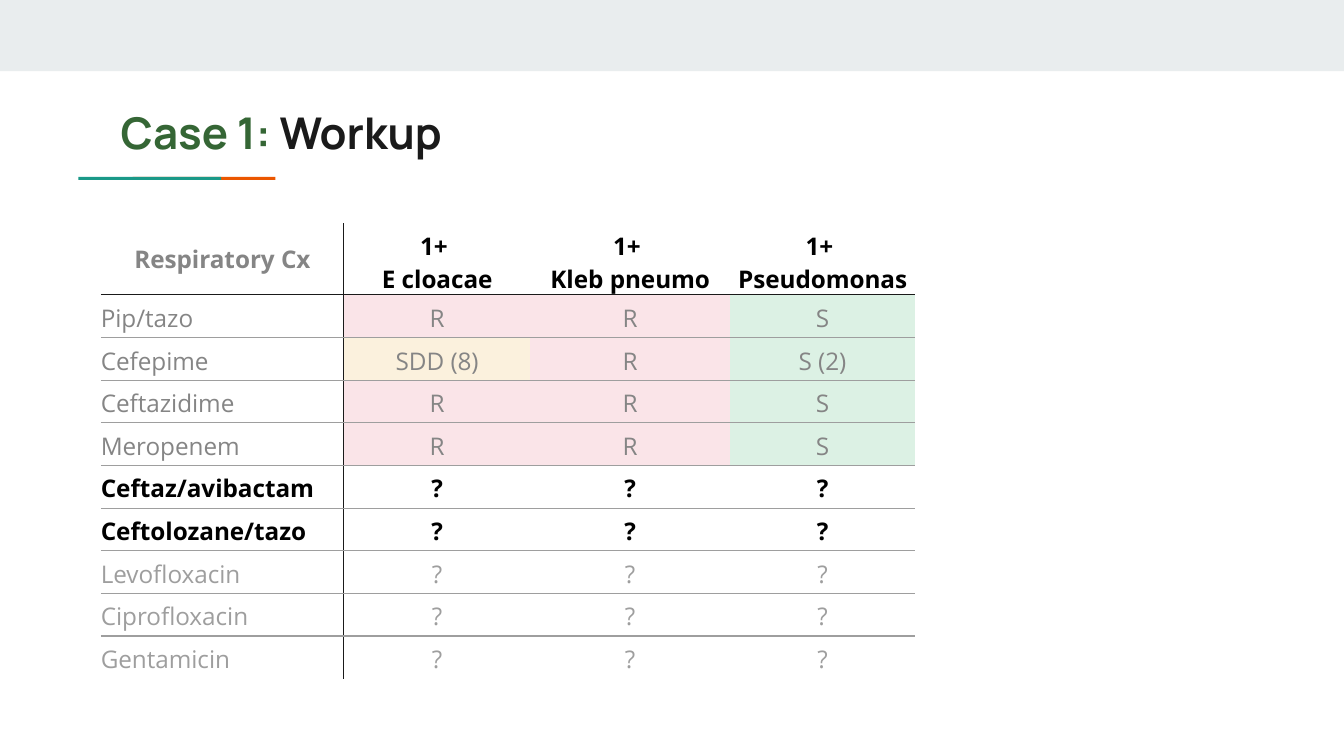
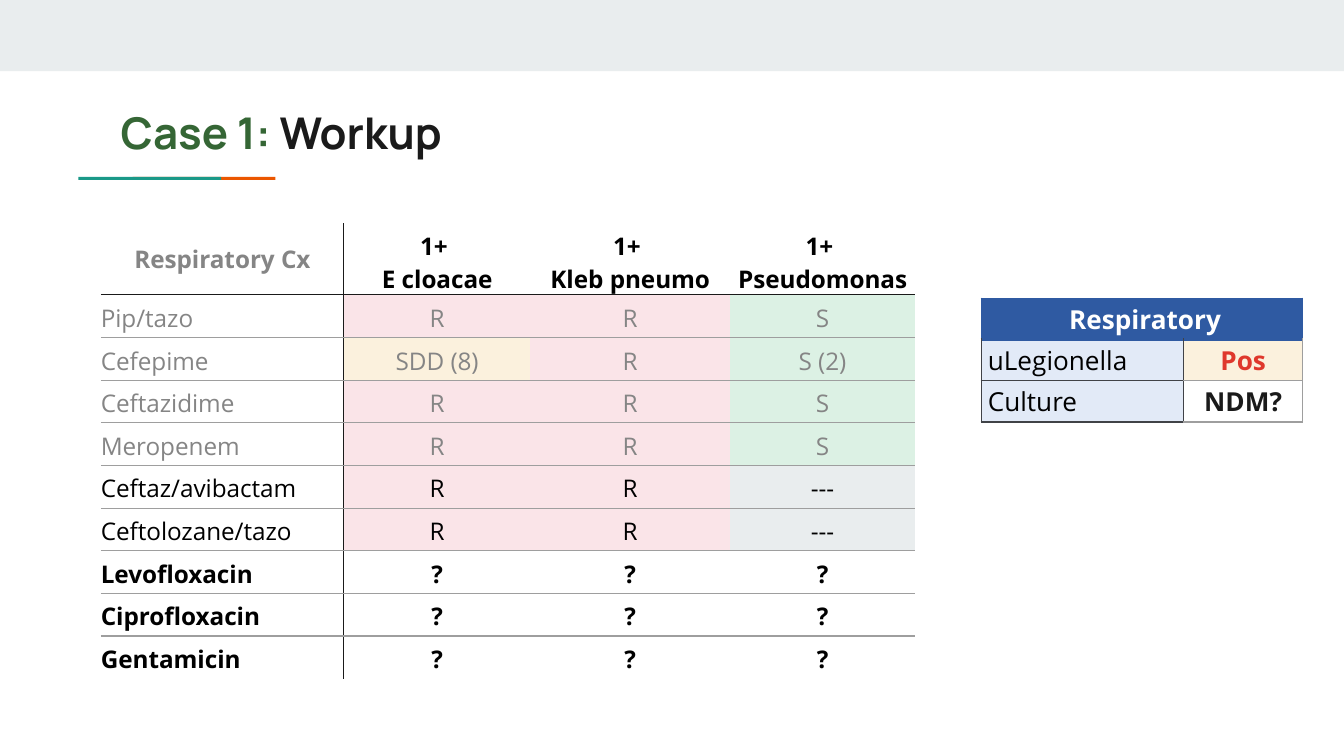
from dataclasses import dataclass
from typing import NamedTuple, Optional

from lxml.etree import SubElement
from pptx import Presentation
from pptx.dml.color import RGBColor
from pptx.enum.shapes import MSO_SHAPE
from pptx.enum.text import MSO_ANCHOR, PP_ALIGN
from pptx.oxml.ns import qn
from pptx.slide import Slide
from pptx.table import Table, _Cell
from pptx.util import Pt


@dataclass(frozen=True)
class Theme:
    heading_font: str = "Manrope"
    body_font: str = "Open Sans"
    title_size: float = 23.4
    culture_size: float = 13
    summary_size: float = 14
    band: str = "E9EDEE"
    teal: str = "1A9988"
    orange: str = "EB5600"
    case_green: str = "356635"
    ink: str = "1A1A1A"
    black: str = "000000"
    white: str = "FFFFFF"
    muted: str = "858585"
    grid: str = "9E9E9E"
    resistant: str = "FAE4E8"
    susceptible: str = "DCF1E4"
    caution: str = "FBF1DD"
    summary_blue: str = "2F5AA2"
    summary_label: str = "E2EAF7"
    summary_line: str = "404247"
    alert: str = "DF382C"


THEME = Theme()


class Bar(NamedTuple):
    left: float
    top: float
    width: float
    height: float
    color: str


class Line(NamedTuple):
    color: str
    width: float = 0.75


class Borders(NamedTuple):
    left: Optional[Line] = None
    right: Optional[Line] = None
    top: Optional[Line] = None
    bottom: Optional[Line] = None


class Insets(NamedTuple):
    left: float = 0
    top: float = 0
    right: float = 0
    bottom: float = 0


@dataclass(frozen=True)
class CellLook:
    size: float
    color: str
    bold: bool = False
    align: PP_ALIGN = PP_ALIGN.CENTER
    anchor: MSO_ANCHOR = MSO_ANCHOR.TOP
    fill: Optional[str] = None
    insets: Insets = Insets()
    borders: Borders = Borders()


@dataclass(frozen=True)
class Drug:
    name: str
    results: tuple[str, ...]
    color: str
    bold: bool = False


@dataclass(frozen=True)
class Finding:
    test: str
    result: str
    color: str
    fill: Optional[str] = None


SLIDE_WIDTH, SLIDE_HEIGHT = 720, 405
DECOR = (
    Bar(0, 0, SLIDE_WIDTH, 38.2, THEME.band),
    Bar(71, 94.8, 76.5, 1.6, THEME.orange),
    Bar(42, 94.8, 76.5, 1.6, THEME.teal),
)
RESULT_FILLS = {
    "R": THEME.resistant,
    "S": THEME.susceptible,
    "SDD": THEME.caution,
    "---": THEME.band,
}
ORGANISMS = ("E cloacae", "Kleb pneumo", "Pseudomonas")
UNKNOWN = ("?", "?", "?")
FIRST_LINE = (
    Drug("Pip/tazo", ("R", "R", "S"), THEME.muted),
    Drug("Cefepime", ("SDD (8)", "R", "S (2)"), THEME.muted),
    Drug("Ceftazidime", ("R", "R", "S"), THEME.muted),
    Drug("Meropenem", ("R", "R", "S"), THEME.muted),
)
COMBINATIONS = ("Ceftaz/avibactam", "Ceftolozane/tazo")
OTHERS = ("Levofloxacin", "Ciprofloxacin", "Gentamicin")
FINDINGS = (
    Finding("uLegionella", "Pos", THEME.alert, THEME.caution),
    Finding("Culture", "NDM?", THEME.ink),
)
NO_GRID_STYLE = "{2D5ABB26-0587-4C30-8999-92F81FD0307C}"


def rgb(color: str) -> RGBColor:
    return RGBColor.from_string(color)


def add_bar(slide: Slide, bar: Bar) -> None:
    rect = slide.shapes.add_shape(
        MSO_SHAPE.RECTANGLE, Pt(bar.left), Pt(bar.top), Pt(bar.width), Pt(bar.height)
    )
    rect.shadow.inherit = False
    rect.fill.solid()
    rect.fill.fore_color.rgb = rgb(bar.color)
    rect.line.fill.background()


def add_title(slide: Slide, case: str, topic: str) -> None:
    frame = slide.shapes.add_textbox(Pt(57.6), Pt(49.7), Pt(605.5), Pt(42.5)).text_frame
    frame.word_wrap = True
    frame.margin_left = frame.margin_right = Pt(7.2)
    frame.margin_top = frame.margin_bottom = Pt(7.2)
    title = frame.paragraphs[0]
    title.font.name = THEME.heading_font
    title.font.size = Pt(THEME.title_size)
    title.font.bold = True
    for words, color in ((case, THEME.case_green), (topic, THEME.ink)):
        run = title.add_run()
        run.text = words
        run.font.color.rgb = rgb(color)


def add_grid(
    slide: Slide, left: float, top: float, widths: tuple[float, ...], row_height: float, rows: int
) -> Table:
    table = slide.shapes.add_table(
        rows, len(widths), Pt(left), Pt(top), Pt(sum(widths)), Pt(row_height * rows)
    ).table
    table.first_row = table.horz_banding = False
    table._tbl.tblPr.find(qn("a:tableStyleId")).text = NO_GRID_STYLE
    for column, width in zip(table.columns, widths):
        column.width = Pt(width)
    for row in table.rows:
        row.height = Pt(row_height)
    return table


def set_borders(cell: _Cell, borders: Borders) -> None:
    properties = cell._tc.get_or_add_tcPr()
    for tag, line in zip(("a:lnL", "a:lnR", "a:lnT", "a:lnB"), borders):
        if line is None:
            SubElement(SubElement(properties, qn(tag), w="0"), qn("a:noFill"))
        else:
            edge = SubElement(properties, qn(tag), w=str(int(Pt(line.width))))
            SubElement(SubElement(edge, qn("a:solidFill")), qn("a:srgbClr"), val=line.color)


def fill_cell(cell: _Cell, text: str, look: CellLook) -> None:
    set_borders(cell, look.borders)
    if look.fill:
        cell.fill.solid()
        cell.fill.fore_color.rgb = rgb(look.fill)
    else:
        cell.fill.background()
    cell.vertical_anchor = look.anchor
    cell.margin_left, cell.margin_top = Pt(look.insets.left), Pt(look.insets.top)
    cell.margin_right, cell.margin_bottom = Pt(look.insets.right), Pt(look.insets.bottom)
    cell.text_frame.text = text
    for paragraph in cell.text_frame.paragraphs:
        paragraph.alignment = look.align
        paragraph.font.name = THEME.body_font
        paragraph.font.size = Pt(look.size)
        paragraph.font.bold = look.bold
        paragraph.font.color.rgb = rgb(look.color)


def add_culture_table(slide: Slide, drugs: tuple[Drug, ...]) -> None:
    table = add_grid(slide, 54, 119.5, (130.2, 100, 106.8, 99.4), 22.3, len(drugs) + 1)
    axis, rule = Line(THEME.ink), Line(THEME.grid)
    insets = Insets(top=3.6, bottom=3.6)

    def edges(column: int, top: Optional[Line], bottom: Optional[Line]) -> Borders:
        return Borders(
            axis if column == 1 else None, axis if column == 0 else None, top, bottom
        )

    headings = ("Respiratory Cx", *(f"1+ \n{organism}" for organism in ORGANISMS))
    for column, heading in enumerate(headings):
        fill_cell(table.cell(0, column), heading, CellLook(
            THEME.culture_size,
            THEME.black if column else THEME.muted,
            bold=True,
            anchor=MSO_ANCHOR.TOP if column else MSO_ANCHOR.MIDDLE,
            insets=insets,
            borders=edges(column, None, axis),
        ))
    for row, drug in enumerate(drugs, start=1):
        top = axis if row == 1 else rule
        bottom = None if row == len(drugs) else rule
        for column, text in enumerate((drug.name, *drug.results)):
            fill_cell(table.cell(row, column), text, CellLook(
                THEME.culture_size,
                drug.color,
                drug.bold,
                align=PP_ALIGN.CENTER if column else PP_ALIGN.LEFT,
                fill=RESULT_FILLS.get(text.split()[0]) if column else None,
                insets=insets,
                borders=edges(column, top, bottom),
            ))


def add_summary_table(slide: Slide) -> None:
    table = add_grid(slide, 525.6, 159.8, (108.6, 63.6), 22.1, len(FINDINGS) + 1)
    outline, divider = Line(THEME.summary_blue), Line(THEME.summary_blue, 1.5)
    dark, light = Line(THEME.summary_line), Line(THEME.grid)
    heading = table.cell(0, 0)
    heading.merge(table.cell(0, 1))
    fill_cell(heading, "Respiratory", CellLook(
        THEME.summary_size, THEME.white, True, anchor=MSO_ANCHOR.MIDDLE,
        fill=THEME.summary_blue, insets=Insets(left=3.6),
        borders=Borders(outline, outline, outline, divider),
    ))
    for row, finding in enumerate(FINDINGS, start=1):
        first = row == 1
        fill_cell(table.cell(row, 0), finding.test, CellLook(
            THEME.summary_size, THEME.black, align=PP_ALIGN.LEFT, anchor=MSO_ANCHOR.MIDDLE,
            fill=THEME.summary_label, insets=Insets(left=3.6),
            borders=Borders(dark, dark, divider if first else dark, dark),
        ))
        fill_cell(table.cell(row, 1), finding.result, CellLook(
            THEME.summary_size, finding.color, True, anchor=MSO_ANCHOR.MIDDLE,
            fill=finding.fill,
            borders=Borders(dark, light, divider if first else light, light),
        ))


def add_workup_slide(deck: Presentation, drugs: tuple[Drug, ...], with_summary: bool) -> None:
    slide = deck.slides.add_slide(deck.slide_layouts[6])
    for bar in DECOR:
        add_bar(slide, bar)
    add_title(slide, "Case 1:", " Workup")
    if with_summary:
        add_summary_table(slide)
    add_culture_table(slide, drugs)


def main() -> None:
    deck = Presentation()
    deck.slide_width, deck.slide_height = Pt(SLIDE_WIDTH), Pt(SLIDE_HEIGHT)
    combinations_pending = (
        *FIRST_LINE,
        *(Drug(name, UNKNOWN, THEME.black, True) for name in COMBINATIONS),
        *(Drug(name, UNKNOWN, THEME.grid) for name in OTHERS),
    )
    others_pending = (
        *FIRST_LINE,
        *(Drug(name, ("R", "R", "---"), THEME.black) for name in COMBINATIONS),
        *(Drug(name, UNKNOWN, THEME.black, True) for name in OTHERS),
    )
    add_workup_slide(deck, combinations_pending, with_summary=False)
    add_workup_slide(deck, others_pending, with_summary=True)
    deck.save("out.pptx")


if __name__ == "__main__":
    main()
